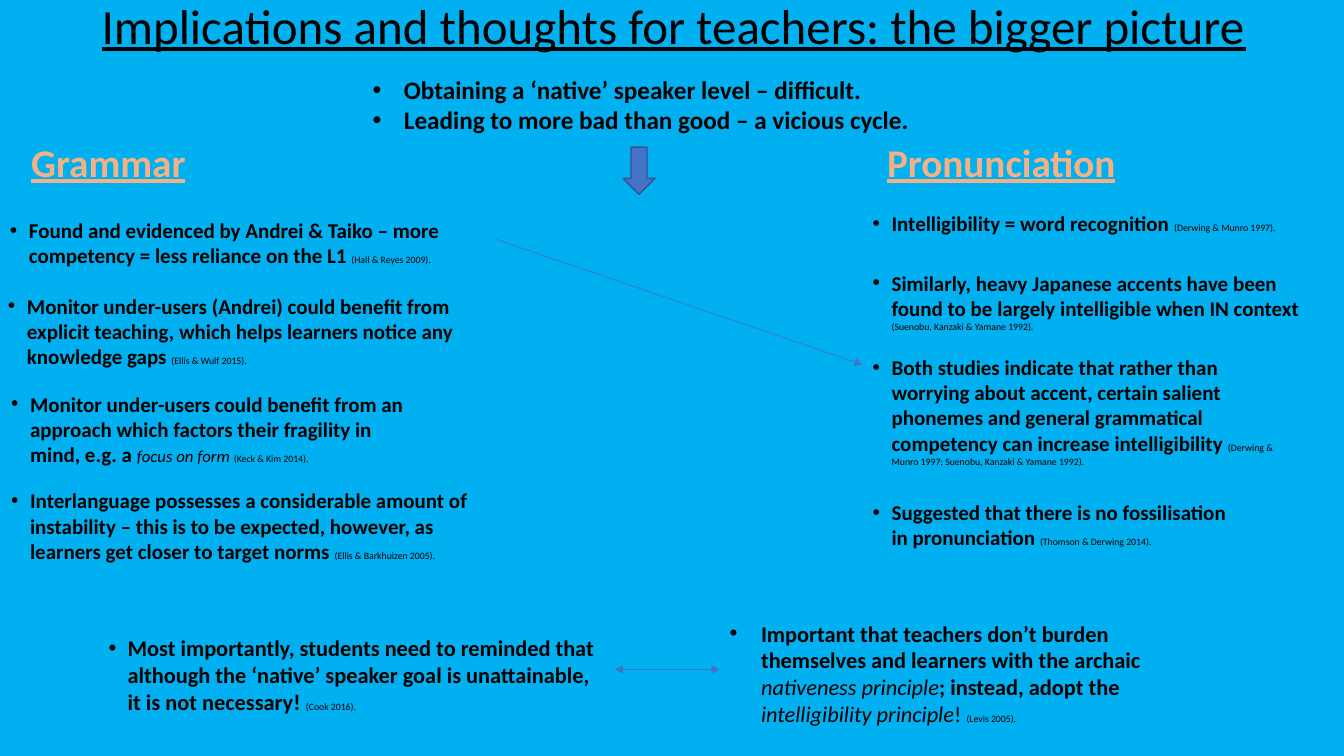
"""Build the slide on implications for teachers of grammar and pronunciation."""
from lxml import etree
from pptx import Presentation
from pptx import util as u
from pptx.dml.color import RGBColor
from pptx.enum import shapes, text
from pptx.oxml.ns import qn

COLOURS = {"background": "00B0F0", "body": "000000", "heading": "F4B183",
           "accent": "4472C4", "outline": "325491"}
FONT = "Calibri"
BOLD, PLAIN, ITALIC = "bold", "plain", "italic"
CITATION_SIZE = 7
NARROW, WIDE = 0.48, 0.79

GRAMMAR = [
    ((0, 5.36, 12.8, 1.55),
     [("Found and evidenced by Andrei & Taiko – more competency = less reliance on the L1", 15, BOLD),
      (" ", 14, BOLD)],
     "(Hall & Reyes 2009)."),
    ((-0.05, 7.26, 12.8, 2.18),
     [("Monitor under-users (Andrei) could benefit from explicit teaching, "
       "which helps learners notice any knowledge gaps ", 15, BOLD)],
     "(Ellis & Wulf 2015)."),
    ((0.03, 9.73, 10.97, 2.95),
     [("Monitor under-users could benefit from an approach which factors "
       "their fragility in mind, e.g. a ", 15, BOLD),
      ("focus on form ", 12, ITALIC)],
     "(Keck & Kim 2014)."),
    ((0.03, 12.17, 12.47, 2.18),
     [("Interlanguage possesses a considerable amount of instability – this is to be "
       "expected, however, as learners get closer to target norms ", 15, BOLD)],
     "(Ellis & Barkhuizen 2005)."),
]
PRONUNCIATION = [
    ((21.74, 5.18, 11.18, 0.89),
     [("Intelligibility = word recognition ", 15, BOLD)],
     "(Derwing & Munro 1997)."),
    ((21.74, 6.68, 11.4, 1.83),
     [("Similarly, heavy Japanese accents have been found to be largely "
       "intelligible when IN context ", 15, BOLD)],
     "(Suenobu, Kanzaki & Yamane 1992)."),
    ((21.74, 8.81, 11.18, 3.12),
     [("Both studies indicate that rather than worrying about accent, certain salient "
       "phonemes and general grammatical competency can increase intelligibility ", 15, BOLD)],
     "(Derwing & Munro 1997; Suenobu, Kanzaki & Yamane 1992)."),
    ((21.74, 12.47, 9.93, 1.55),
     [("Suggested that there is no fossilisation in pronunciation ", 15, BOLD)],
     "(Thomson & Derwing 2014)."),
]
STUDENTS = (
    (2.49, 15.85, 12.8, 2.31),
    [("Most importantly, students need to reminded that although the ‘native’ "
      "speaker goal is unattainable, it is not necessary! ", 16, BOLD)],
    "(Cook 2016).")
TEACHERS = (
    (18.14, 15.49, 12.8, 3),
    [("Important that teachers don’t burden themselves and learners with the archaic ", 16, BOLD),
     ("nativeness principle", 16, ITALIC),
     ("; instead, adopt the ", 16, BOLD),
     ("intelligibility principle", 16, ITALIC),
     ("! ", 16, PLAIN)],
    "(Levis 2005).")


class SlideBuilder:
    """Hold the style and the current slide, and add each kind of element."""

    def __init__(self, presentation):
        """Add a title-only slide with the background colour."""
        self.slide = presentation.slides.add_slide(presentation.slide_layouts[5])
        fill = self.slide.background.fill
        fill.solid()
        fill.fore_color.rgb = self.colour("background")

    def colour(self, name):
        """Return the named colour."""
        return RGBColor.from_string(COLOURS[name])

    def add_run(self, paragraph, words, size, style=PLAIN, colour="body", underline=False):
        """Add one formatted run to a paragraph."""
        run = paragraph.add_run()
        run.text = words
        font = run.font
        font.name, font.size = FONT, u.Pt(size)
        font.bold, font.italic = style == BOLD, style == ITALIC
        font.underline = underline
        font.color.rgb = self.colour(colour)

    def add_title(self, box, words):
        """Place and format the title placeholder."""
        title = self.slide.shapes.title
        title.left, title.top, title.width, title.height = map(u.Cm, box)
        frame = title.text_frame
        frame.word_wrap = True
        frame.auto_size = text.MSO_AUTO_SIZE.SHAPE_TO_FIT_TEXT
        frame.vertical_anchor = text.MSO_ANCHOR.TOP
        paragraph = frame.paragraphs[0]
        paragraph.alignment = text.PP_ALIGN.CENTER
        paragraph.line_spacing = 1.0
        paragraph.space_before = u.Pt(0)
        self.add_run(paragraph, words, 35, underline=True)

    def add_text_frame(self, box):
        """Add a wrapping text box and return its frame."""
        frame = self.slide.shapes.add_textbox(*map(u.Cm, box)).text_frame
        frame.word_wrap = True
        frame.auto_size = text.MSO_AUTO_SIZE.SHAPE_TO_FIT_TEXT
        return frame

    def add_heading(self, box, words):
        """Add an underlined column heading."""
        paragraph = self.add_text_frame(box).paragraphs[0]
        paragraph.alignment = text.PP_ALIGN.CENTER
        self.add_run(paragraph, words, 28, BOLD, "heading", True)

    def add_bullets(self, box, bullets, indent=NARROW):
        """Add a text box with one bulleted paragraph per list of runs."""
        frame = self.add_text_frame(box)
        for index, runs in enumerate(bullets):
            paragraph = frame.add_paragraph() if index else frame.paragraphs[0]
            properties = paragraph._p.get_or_add_pPr()
            properties.set("marL", str(u.Cm(indent)))
            properties.set("indent", str(-u.Cm(indent)))
            etree.SubElement(properties, qn("a:buFont")).set("typeface", "Arial")
            etree.SubElement(properties, qn("a:buChar")).set("char", "•")
            for run in runs:
                self.add_run(paragraph, *run)

    def add_point(self, box, runs, citation, indent=NARROW):
        """Add one bulleted point that ends with its citation."""
        self.add_bullets(box, [runs + [(citation, CITATION_SIZE)]], indent)

    def add_down_arrow(self, box):
        """Add the block arrow."""
        arrow = self.slide.shapes.add_shape(shapes.MSO_SHAPE.DOWN_ARROW, *map(u.Cm, box))
        arrow.shadow.inherit = False
        arrow.fill.solid()
        arrow.fill.fore_color.rgb = self.colour("accent")
        arrow.line.color.rgb = self.colour("outline")
        arrow.line.width = u.Pt(1)

    def add_line(self, start, end, arrowheads):
        """Add a thin straight connector with the given arrowheads."""
        line = self.slide.shapes.add_connector(
            shapes.MSO_CONNECTOR.STRAIGHT, *map(u.Cm, start + end))
        line.line.color.rgb = self.colour("accent")
        line.line.width = u.Pt(0.5)
        for arrowhead in arrowheads:
            etree.SubElement(line.line._ln, qn(arrowhead)).set("type", "triangle")
        etree.SubElement(line._element.spPr, qn("a:effectLst"))


def main():
    """Build and save the slide."""
    presentation = Presentation()
    presentation.slide_width, presentation.slide_height = u.Cm(33.87), u.Cm(19.05)
    builder = SlideBuilder(presentation)
    builder.add_title((1.09, -0.25, 31.78, 1.8),
                      "Implications and thoughts for teachers: the bigger picture")
    builder.add_bullets((9.14, 1.75, 16.97, 1.8),
                        [[("Obtaining a ‘native’ speaker level – difficult.", 18, BOLD)],
                         [("Leading to more bad than good – a vicious cycle.", 18, BOLD)]], WIDE)
    builder.add_down_arrow((15.7, 3.71, 0.81, 1.19))
    builder.add_heading((-0.18, 3.35, 5.82, 1.45), "Grammar")
    builder.add_heading((22.02, 3.35, 6.43, 1.45), "Pronunciation")
    for point in GRAMMAR + PRONUNCIATION + [STUDENTS]:
        builder.add_point(*point)
    builder.add_point(*TEACHERS, indent=WIDE)
    builder.add_line((12.47, 6.02), (21.74, 9.19), ["a:tailEnd"])
    builder.add_line((15.49, 16.87), (18.14, 16.87), ["a:headEnd", "a:tailEnd"])
    presentation.save("out.pptx")


if __name__ == "__main__":
    main()
